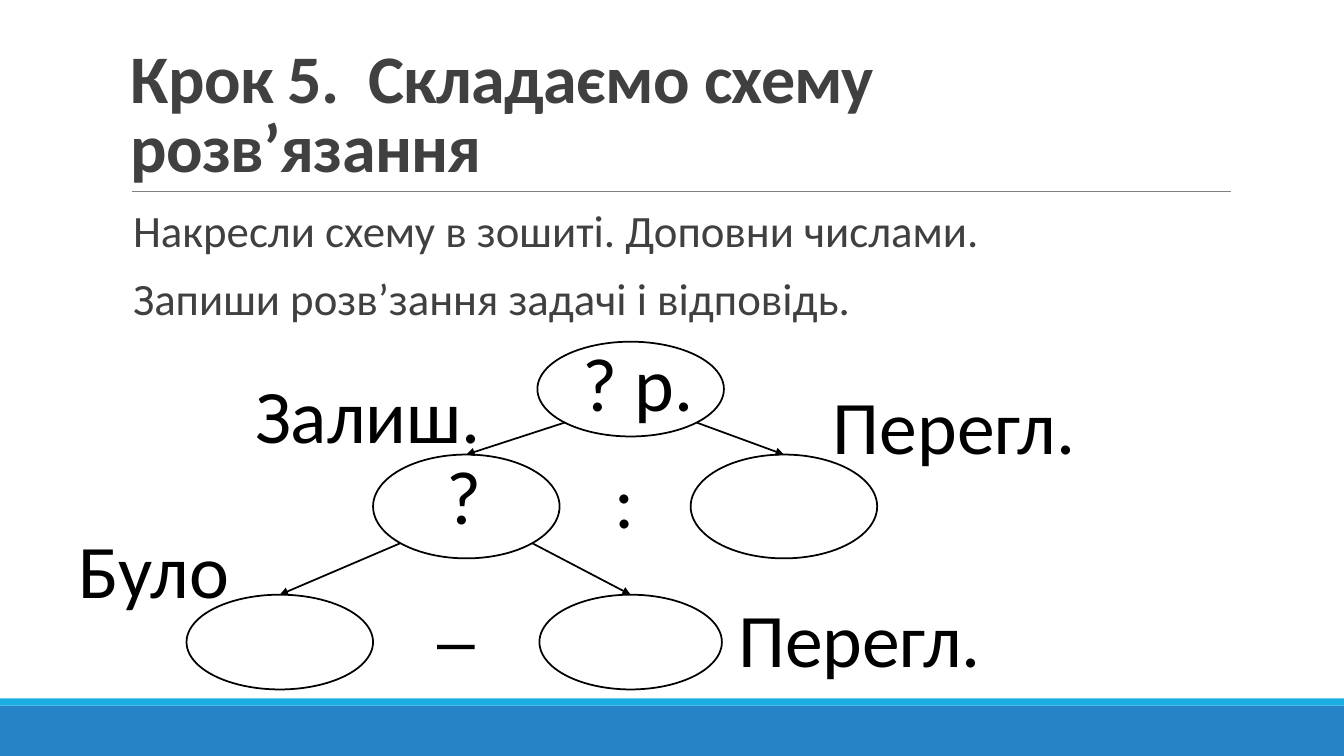
from math import sqrt

from lxml import etree
from pptx import Presentation
from pptx.dml.color import RGBColor
from pptx.enum.shapes import MSO_CONNECTOR as Connector, MSO_SHAPE as Shape
from pptx.enum.text import MSO_ANCHOR as Anchor, PP_ALIGN as Align
from pptx.oxml.ns import qn
from pptx.util import Inches, Pt

COLORS = {"band": "2683C6", "stripe": "1CADE4", "rule": "808080",
          "text": "404040", "ink": "000000", "paper": "FFFFFF"}
FONT = "Calibri"
TITLE = "Крок 5.  Складаємо схему розв’язання"
TASKS = ["Накресли схему в зошиті. Доповни числами.",
         "Запиши розв’зання задачі і відповідь."]
BANDS = [("band", 7, 0.5), ("stripe", 6.93, 0.07)]
NODES = {
    "answer": (5.33, 3.39, 1.85, 0.94),
    "left": (3.7, 4.51, 1.85, 1.03),
    "watched": (6.85, 4.51, 1.85, 1.03),
    "had": (1.85, 5.9, 1.85, 0.94),
    "viewed": (5.35, 5.9, 1.81, 0.94),
}
BRANCHES = [("answer", "watched", 1), ("answer", "left", -1),
            ("left", "viewed", 1), ("left", "had", -1)]
LABELS = [
    ("? р.", 5.67, 3.28, 1.31), ("Залиш.", 2.42, 3.6, 2.46),
    ("Перегл.", 8.15, 3.71, 2.63), (":", 5.99, 4.44, 0.41),
    ("_", 4.24, 5.54, 0.58), ("?", 4.33, 4.4, 0.55),
    ("Було", 0.67, 5.14, 1.71), ("Перегл.", 7.21, 5.82, 2.63),
]
LABEL_HEIGHT = 1.01
TITLE_FORMAT = {"line_spacing": 0.85}
TASK_FORMAT = {"alignment": Align.JUSTIFY, "line_spacing": 0.9,
               "space_before": Pt(12), "space_after": Pt(2)}
LABEL_FORMAT = {"alignment": Align.CENTER}

prs = Presentation()
prs.slide_width, prs.slide_height = Inches(13.33), Inches(7.5)
slide = prs.slides.add_slide(prs.slide_layouts[6])


def color(name):
    return RGBColor.from_string(COLORS[name])


def add_filled(kind, box, fill, outline=None):
    shape = slide.shapes.add_shape(kind, *map(Inches, box))
    shape.shadow.inherit = False
    shape.fill.solid()
    shape.fill.fore_color.rgb = color(fill)
    if outline:
        shape.line.color.rgb = color(outline)
        shape.line.width = Pt(1.25)
    else:
        shape.line.fill.background()
    return shape


def add_line(start, end, ink, width):
    line = slide.shapes.add_connector(Connector.STRAIGHT, *map(Inches, start + end))
    line.line.color.rgb = color(ink)
    line.line.width = Pt(width)
    etree.SubElement(line._element.spPr, qn("a:effectLst"))
    return line


def add_text(box, lines, size, ink, layout, wrap=True, bold=False):
    frame = slide.shapes.add_textbox(*map(Inches, box)).text_frame
    frame.word_wrap = wrap
    for index, line in enumerate(lines):
        paragraph = frame.paragraphs[0] if index == 0 else frame.add_paragraph()
        for key, value in layout.items():
            setattr(paragraph, key, value)
        run = paragraph.add_run()
        run.text = line
        font_format = {"name": FONT, "size": Pt(size), "bold": bold}
        for key, value in font_format.items():
            setattr(run.font, key, value)
        run.font.color.rgb = color(ink)
    return frame


for fill, top, height in BANDS:
    add_filled(Shape.RECTANGLE, (0, top, 13.33, height), fill)
add_line((1.31, 1.9), (12.21, 1.9), "rule", 0.5)

title = add_text((1.2, 0.31, 11, 1.59), [TITLE], 48.6, "text", TITLE_FORMAT, bold=True)
title.vertical_anchor = Anchor.BOTTOM
title.paragraphs[0].runs[0].font._element.set("spc", "-50")

tasks = add_text((1.2, 2.02, 11, 0.8), TASKS, 32, "text", TASK_FORMAT)
tasks.margin_left, tasks.margin_right = Inches(0.12), 0

ovals = {name: add_filled(Shape.OVAL, box, "paper", "ink") for name, box in NODES.items()}

for parent, child, side in BRANCHES:
    left, top, width, height = NODES[parent]
    start = (left + width / 2 * (1 + side / sqrt(2)), top + height / 2 * (1 + 1 / sqrt(2)))
    child_left, child_top, child_width, _ = NODES[child]
    arrow = add_line(start, (child_left + child_width / 2, child_top), "ink", 1.25)
    arrow.end_connect(ovals[child], 0)
    etree.SubElement(arrow.line._get_or_add_ln(), qn("a:tailEnd"), type="triangle")

for label, left, top, width in LABELS:
    add_text((left, top, width, LABEL_HEIGHT), [label], 54, "ink", LABEL_FORMAT, wrap=False)

prs.save("out.pptx")
